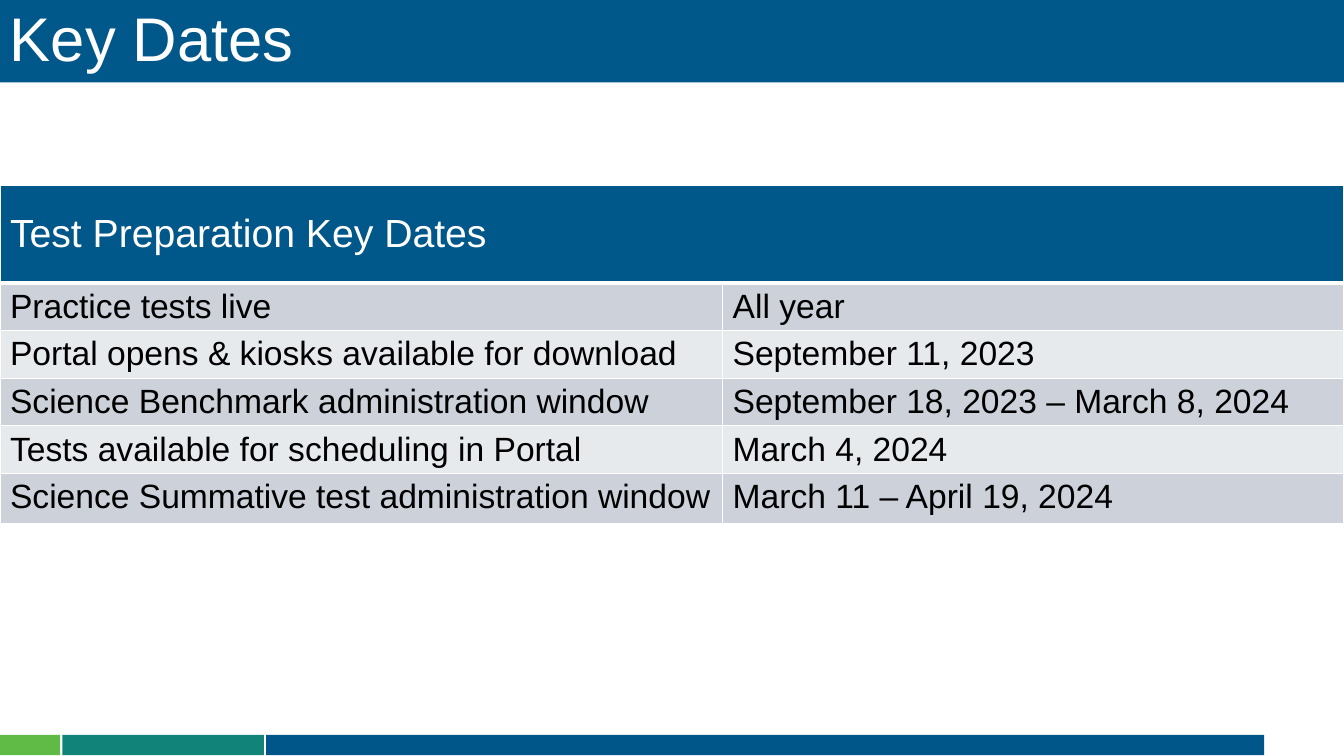
import pptx
import pptx.dml.color
import pptx.enum.shapes
import pptx.enum.text
import pptx.oxml
import pptx.oxml.ns
import pptx.util
from pptx.util import Cm

NAVY, WHITE = "005789", "FFFFFF"
SLIDE_WIDTH = Cm(33.87)


def paint(target, color):
    """Give a shape or table cell a solid fill."""
    target.fill.solid()
    target.fill.fore_color.rgb = pptx.dml.color.RGBColor.from_string(color)


def write(frame, text, size, color):
    """Add one run of text to the first paragraph of a frame."""
    run = frame.paragraphs[0].add_run()
    run.text = text
    run.font.name = "Arial"
    run.font.size = pptx.util.Pt(size)
    run.font.color.rgb = pptx.dml.color.RGBColor.from_string(color)


deck = pptx.Presentation()
deck.slide_width, deck.slide_height = SLIDE_WIDTH, Cm(19.05)
slide = deck.slides.add_slide(deck.slide_layouts[6])

# Footer stripes and title band
bands = [
    (0, 18.52, 1.52, 0.51, "60BB46", ""),
    (1.57, 18.52, 5.08, 0.51, "128379", ""),
    (6.71, 18.52, 25.15, 0.51, "005689", ""),
    (0, 0, 33.87, 2.08, NAVY, "Key Dates"),
]
for left, top, width, height, color, title in bands:
    band = slide.shapes.add_shape(
        pptx.enum.shapes.MSO_SHAPE.RECTANGLE, Cm(left), Cm(top), Cm(width), Cm(height))
    band.shadow.inherit = False
    band.line.fill.background()
    paint(band, color)
    if title:
        band.text_frame.word_wrap = True
        band.text_frame.vertical_anchor = pptx.enum.text.MSO_ANCHOR.MIDDLE
        heading = band.text_frame.paragraphs[0]
        heading.alignment = pptx.enum.text.PP_ALIGN.LEFT
        heading.line_spacing = 0.9
        write(band.text_frame, title, 44, WHITE)

# Key dates table
key_dates = [
    ("Test Preparation Key Dates", ""),
    ("Practice tests live", "All year"),
    ("Portal opens & kiosks available for download", "September 11, 2023"),
    ("Science Benchmark administration window", "September 18, 2023 – March 8, 2024"),
    ("Tests available for scheduling in Portal", "March 4, 2024"),
    ("Science Summative test administration window", "March 11 – April 19, 2024"),
]
row_heights = [2.46, 1.19, 1.19, 1.19, 1.19, 1.27]
schedule = slide.shapes.add_table(
    len(key_dates), 2, 0, Cm(4.67), SLIDE_WIDTH, Cm(sum(row_heights))).table
schedule.first_row = schedule.horz_banding = False
schedule.columns[0].width = Cm(18.21)
schedule.columns[1].width = Cm(15.66)

for r, entry in enumerate(key_dates):
    schedule.rows[r].height = Cm(row_heights[r])
    for c, text in enumerate(entry):
        cell = schedule.cell(r, c)
        # White borders, heavier under the header
        for side in "LRTB":
            heavy = (r, side) in [(0, "B"), (1, "T")]
            cell_properties = cell._tc.get_or_add_tcPr()
            cell_properties.append(pptx.oxml.parse_xml(
                f'<a:ln{side} {pptx.oxml.ns.nsdecls("a")} w="{38100 if heavy else 12700}">'
                f'<a:solidFill><a:srgbClr val="{WHITE}"/></a:solidFill></a:ln{side}>'))
        paint(cell, NAVY if r == 0 else "CCD1DA" if r % 2 else "E7EAED")
        if r == 0:
            cell.vertical_anchor = pptx.enum.text.MSO_ANCHOR.MIDDLE
        if text:
            write(cell.text_frame, text, 24 if r else 28, "000000" if r else WHITE)

schedule.cell(0, 0).merge(schedule.cell(0, 1))

deck.save("out.pptx")
